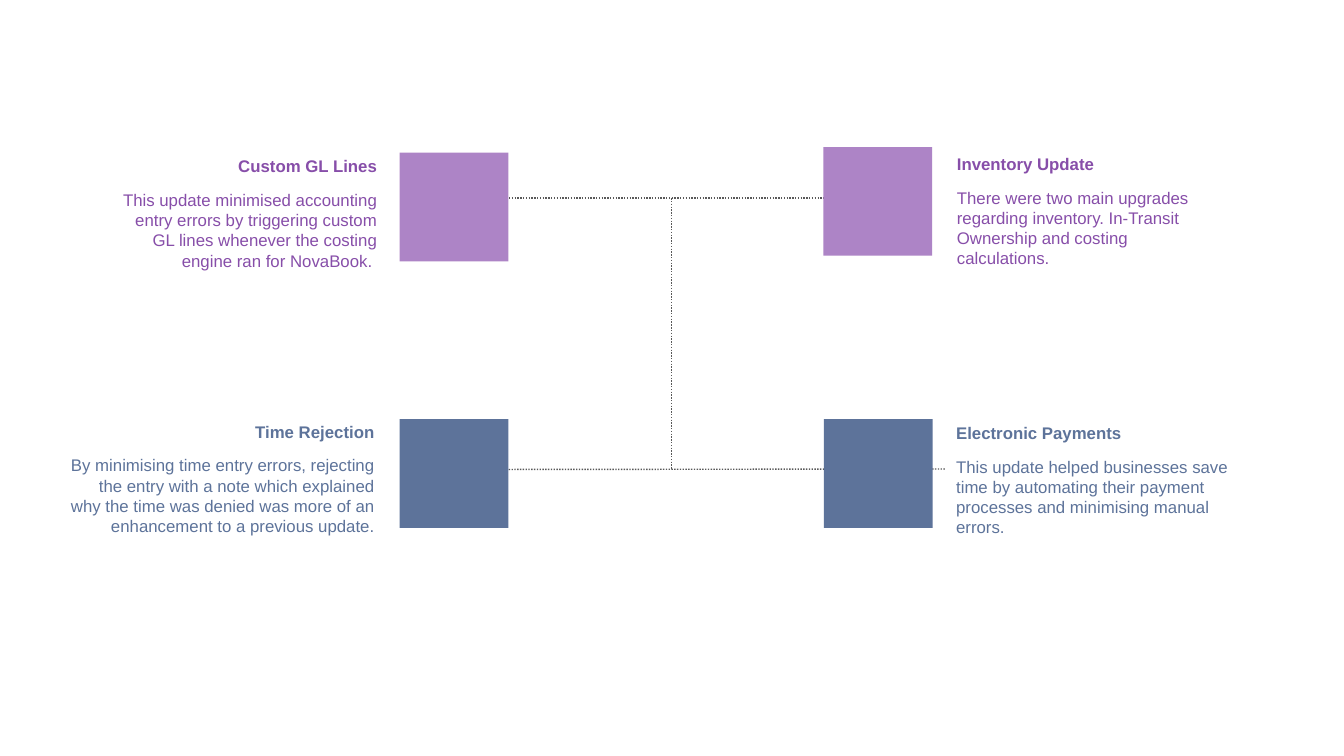
from dataclasses import dataclass

from pptx import Presentation
from pptx.dml.color import RGBColor
from pptx.enum.dml import MSO_LINE
from pptx.enum.shapes import MSO_CONNECTOR, MSO_SHAPE
from pptx.enum.text import MSO_AUTO_SIZE, PP_ALIGN
from pptx.oxml.ns import qn
from pptx.shapes.group import GroupShape
from pptx.slide import Slide
from pptx.util import Cm, Pt

LILAC = RGBColor(0xAD, 0x84, 0xC6)
PURPLE = RGBColor(0x87, 0x4E, 0xA9)
SLATE = RGBColor(0x5D, 0x73, 0x9A)
GREY = RGBColor(0x59, 0x59, 0x59)

SIDE = 4.11
HEAD_HIGH = 1.02
BODY_HIGH = 3.33
BODY_DROP = 1.28


@dataclass(frozen=True)
class Card:
    head: str
    body: str
    fill: RGBColor
    ink: RGBColor
    left: float
    top: float
    edge: float
    head_top: float
    head_wide: float
    body_wide: float
    flush: PP_ALIGN


@dataclass(frozen=True)
class Link:
    x1: float
    y1: float
    x2: float
    y2: float


CARDS = [
    Card("Inventory Update",
         "There were two main upgrades regarding inventory. In-Transit "
         "Ownership and costing calculations.",
         LILAC, PURPLE, 31.12, 5.56, 35.92, 5.69, 8.18, 9.7, PP_ALIGN.LEFT),
    Card("Custom GL Lines",
         "This update minimised accounting entry errors by triggering custom "
         "GL lines whenever the costing engine ran for NovaBook. ",
         LILAC, PURPLE, 15.11, 5.77, 14.5, 5.77, 12.62, 10.49, PP_ALIGN.RIGHT),
    Card("Electronic Payments",
         "This update helped businesses save time by automating their payment "
         "processes and minimising manual errors.",
         SLATE, SLATE, 31.14, 15.85, 35.89, 15.85, 8.18, 10.85, PP_ALIGN.LEFT),
    Card("Time Rejection",
         "By minimising time entry errors, rejecting the entry with a note "
         "which explained why the time was denied was more of an enhancement "
         "to a previous update.",
         SLATE, SLATE, 15.11, 15.85, 14.4, 15.8, 8.18, 12.01, PP_ALIGN.RIGHT),
]

LINKS = [
    Link(16.59, 7.49, 35.15, 7.49),
    Link(25.37, 7.49, 25.37, 17.75),
    Link(16.79, 17.75, 35.76, 17.73),
]


def draw_link(slide: Slide, link: Link) -> None:
    line = slide.shapes.add_connector(
        MSO_CONNECTOR.STRAIGHT,
        Cm(link.x1), Cm(link.y1), Cm(link.x2), Cm(link.y2))
    line.line.color.rgb = GREY
    line.line.width = Pt(1.5)
    line.line.dash_style = MSO_LINE.ROUND_DOT
    props = line._element.spPr
    props.append(props.makeelement(qn("a:effectLst"), {}))


def draw_text(group: GroupShape, card: Card, text: str, top: float,
              wide: float, high: float, bold: bool) -> None:
    left = card.edge - wide if card.flush == PP_ALIGN.RIGHT else card.edge
    frame = group.shapes.add_textbox(
        Cm(left), Cm(top), Cm(wide), Cm(high)).text_frame
    frame.word_wrap = True
    frame.auto_size = MSO_AUTO_SIZE.SHAPE_TO_FIT_TEXT
    para = frame.paragraphs[0]
    para.alignment = card.flush
    run = para.add_run()
    run.text = text
    run.font.name = "Arial"
    run.font.size = Pt(18)
    run.font.bold = bold
    run.font.color.rgb = card.ink


def draw_card(slide: Slide, card: Card) -> None:
    group = slide.shapes.add_group_shape()
    box = group.shapes.add_shape(
        MSO_SHAPE.RECTANGLE,
        Cm(card.left), Cm(card.top), Cm(SIDE), Cm(SIDE))
    box.shadow.inherit = False
    box.fill.solid()
    box.fill.fore_color.rgb = card.fill
    box.line.fill.background()
    draw_text(group, card, card.body, card.head_top + BODY_DROP,
              card.body_wide, BODY_HIGH, False)
    draw_text(group, card, card.head, card.head_top,
              card.head_wide, HEAD_HIGH, True)


def main() -> None:
    deck = Presentation()
    deck.slide_width = Cm(50.8)
    deck.slide_height = Cm(28.58)
    slide = deck.slides.add_slide(deck.slide_layouts[6])
    for link in LINKS:
        draw_link(slide, link)
    for card in CARDS:
        draw_card(slide, card)
    deck.save("out.pptx")


if __name__ == "__main__":
    main()
